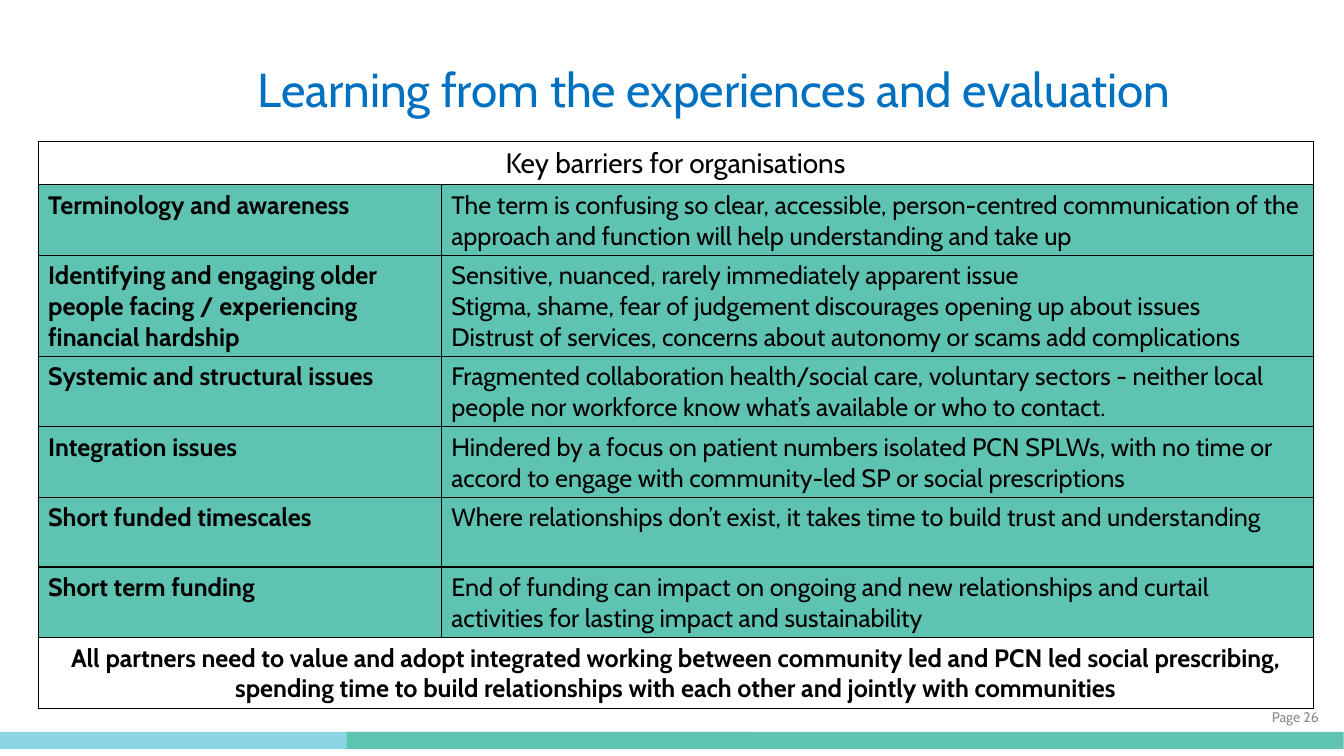
"""Build the slide on key barriers for organisations as a bordered table."""
from dataclasses import dataclass

from lxml.etree import SubElement
from pptx import Presentation
from pptx.dml.color import RGBColor
from pptx.enum.shapes import MSO_SHAPE as Preset
from pptx.enum.text import MSO_ANCHOR as Anchor, PP_ALIGN as Align
from pptx.oxml import parse_xml
from pptx.oxml.ns import nsdecls, qn
from pptx.util import Pt

FONT = "Cabin"
BLACK = RGBColor(0x00, 0x00, 0x00)
WHITE = RGBColor(0xFF, 0xFF, 0xFF)
TEAL = RGBColor(0x5F, 0xC3, 0xB1)
SKY = RGBColor(0x8C, 0xD5, 0xE3)
BLUE = RGBColor(0x00, 0x70, 0xC0)
GREY = RGBColor(0x8C, 0x8C, 0x8C)
COLUMN_WIDTHS = (288, 622.8)


@dataclass(frozen=True)
class Panel:
    left: float
    top: float
    width: float
    height: float
    fill: RGBColor | None = None


@dataclass(frozen=True)
class TextStyle:
    size: float
    color: RGBColor = BLACK
    bold: bool = False
    align: Align = Align.LEFT
    spacing: float = 1.0


@dataclass(frozen=True)
class Barrier:
    name: str
    effects: tuple[str, ...]


FOOTER_BANDS = (
    Panel(0, 522.7, 537.1, 12.2, SKY),
    Panel(247.7, 522.7, 712.1, 12.2, TEAL),
)
PAGE_NUMBER = Panel(733, 493.2, 216, 28.8)
HEADING = Panel(177.1, 15.8, 771.8, 99.4, WHITE)
TABLE_AREA = Panel(27.2, 100.8, sum(COLUMN_WIDTHS), 405.4)

PAGE_STYLE = TextStyle(10, GREY, align=Align.RIGHT)
HEADING_STYLE = TextStyle(34, BLUE, spacing=0.9)
CAPTION_STYLE = TextStyle(20, align=Align.CENTER)
NAME_STYLE = TextStyle(18, bold=True)
EFFECT_STYLE = TextStyle(18)
CONCLUSION_STYLE = TextStyle(18, bold=True, align=Align.CENTER)

CAPTION = "Key barriers for organisations"
CONCLUSION = (
    "All partners need to value and adopt integrated working between community led "
    "and PCN led social prescribing, spending time to build relationships with each "
    "other and jointly with communities"
)
BARRIERS = (
    Barrier("Terminology and awareness", (
        "The term is confusing so clear, accessible, person-centred communication of "
        "the approach and function will help understanding and take up",
    )),
    Barrier("Identifying and engaging older people facing / experiencing financial hardship", (
        "Sensitive, nuanced, rarely immediately apparent issue",
        "Stigma, shame, fear of judgement discourages opening up about issues",
        "Distrust of services, concerns about autonomy or scams add complications",
    )),
    Barrier("Systemic and structural issues", (
        "Fragmented collaboration health/social care, voluntary sectors - neither local "
        "people nor workforce know what’s available or who to contact.",
    )),
    Barrier("Integration issues", (
        "Hindered by a focus on patient numbers isolated PCN SPLWs, with no time or "
        "accord to engage with community-led SP or social prescriptions",
    )),
    Barrier("Short funded timescales", (
        "Where relationships don’t exist, it takes time to build trust and understanding",
    )),
    Barrier("Short term funding", (
        "End of funding can impact on ongoing and new relationships and curtail "
        "activities for lasting impact and sustainability",
    )),
)
ROW_HEIGHTS = (22.3, *[49.7] * len(BARRIERS), 33.8)


def write(frame, lines: tuple[str, ...], style: TextStyle) -> None:
    """Fill a text frame with one styled paragraph per line."""
    font_format = {"name": FONT, "size": Pt(style.size), "bold": style.bold}
    for index, line in enumerate(lines):
        paragraph = frame.add_paragraph() if index else frame.paragraphs[0]
        paragraph.alignment = style.align
        paragraph.line_spacing = style.spacing
        run = paragraph.add_run()
        run.text = line
        for attribute, value in font_format.items():
            setattr(run.font, attribute, value)
        run.font.color.rgb = style.color


def place(panel: Panel) -> tuple[Pt, Pt, Pt, Pt]:
    """Return the position and size of a panel as lengths."""
    return Pt(panel.left), Pt(panel.top), Pt(panel.width), Pt(panel.height)


def add_panel(slide, panel: Panel):
    """Draw a plain filled rectangle."""
    rectangle = slide.shapes.add_shape(Preset.RECTANGLE, *place(panel))
    rectangle.shadow.inherit = False
    rectangle.fill.solid()
    rectangle.fill.fore_color.rgb = panel.fill
    rectangle.line.fill.background()
    return rectangle


def format_cell(cell, fill: RGBColor) -> None:
    """Give a cell its fill and a thin border on all four sides."""
    cell.fill.solid()
    cell.fill.fore_color.rgb = fill
    properties = cell._tc.get_or_add_tcPr()
    for position, side in enumerate(("lnL", "lnR", "lnT", "lnB")):
        border = parse_xml(f'<a:{side} {nsdecls("a")} w="{Pt(1)}"/>')
        solid = SubElement(border, qn("a:solidFill"))
        SubElement(solid, qn("a:srgbClr"), val=str(BLACK))
        properties.insert(position, border)


def add_barrier_table(slide) -> None:
    """Draw the caption, the barriers and the conclusion as a table."""
    table = slide.shapes.add_table(
        len(ROW_HEIGHTS), len(COLUMN_WIDTHS), *place(TABLE_AREA)
    ).table
    for attribute, value in {"first_row": False, "horz_banding": False}.items():
        setattr(table, attribute, value)
    for column, width in zip(table.columns, COLUMN_WIDTHS):
        column.width = Pt(width)
    last = len(ROW_HEIGHTS) - 1
    for index, (row, height) in enumerate(zip(table.rows, ROW_HEIGHTS)):
        row.height = Pt(height)
        for cell in row.cells:
            format_cell(cell, WHITE if index in (0, last) else TEAL)
    for index, text, style in ((0, CAPTION, CAPTION_STYLE), (last, CONCLUSION, CONCLUSION_STYLE)):
        table.cell(index, 0).merge(table.cell(index, 1))
        write(table.cell(index, 0).text_frame, (text,), style)
    for index, barrier in enumerate(BARRIERS, start=1):
        write(table.cell(index, 0).text_frame, (barrier.name,), NAME_STYLE)
        write(table.cell(index, 1).text_frame, barrier.effects, EFFECT_STYLE)


def main() -> None:
    """Assemble the slide and save it."""
    deck = Presentation()
    deck.slide_width, deck.slide_height = Pt(960), Pt(540)
    slide = deck.slides.add_slide(deck.slide_layouts[6])
    for band in FOOTER_BANDS:
        add_panel(slide, band)
    page_number = slide.shapes.add_textbox(*place(PAGE_NUMBER)).text_frame
    heading = add_panel(slide, HEADING).text_frame
    for frame, anchor in ((page_number, Anchor.BOTTOM), (heading, Anchor.MIDDLE)):
        for attribute, value in {"word_wrap": True, "vertical_anchor": anchor}.items():
            setattr(frame, attribute, value)
    write(page_number, ("Page 26",), PAGE_STYLE)
    write(heading, ("Learning from the experiences and evaluation",), HEADING_STYLE)
    add_barrier_table(slide)
    deck.save("out.pptx")


if __name__ == "__main__":
    main()
